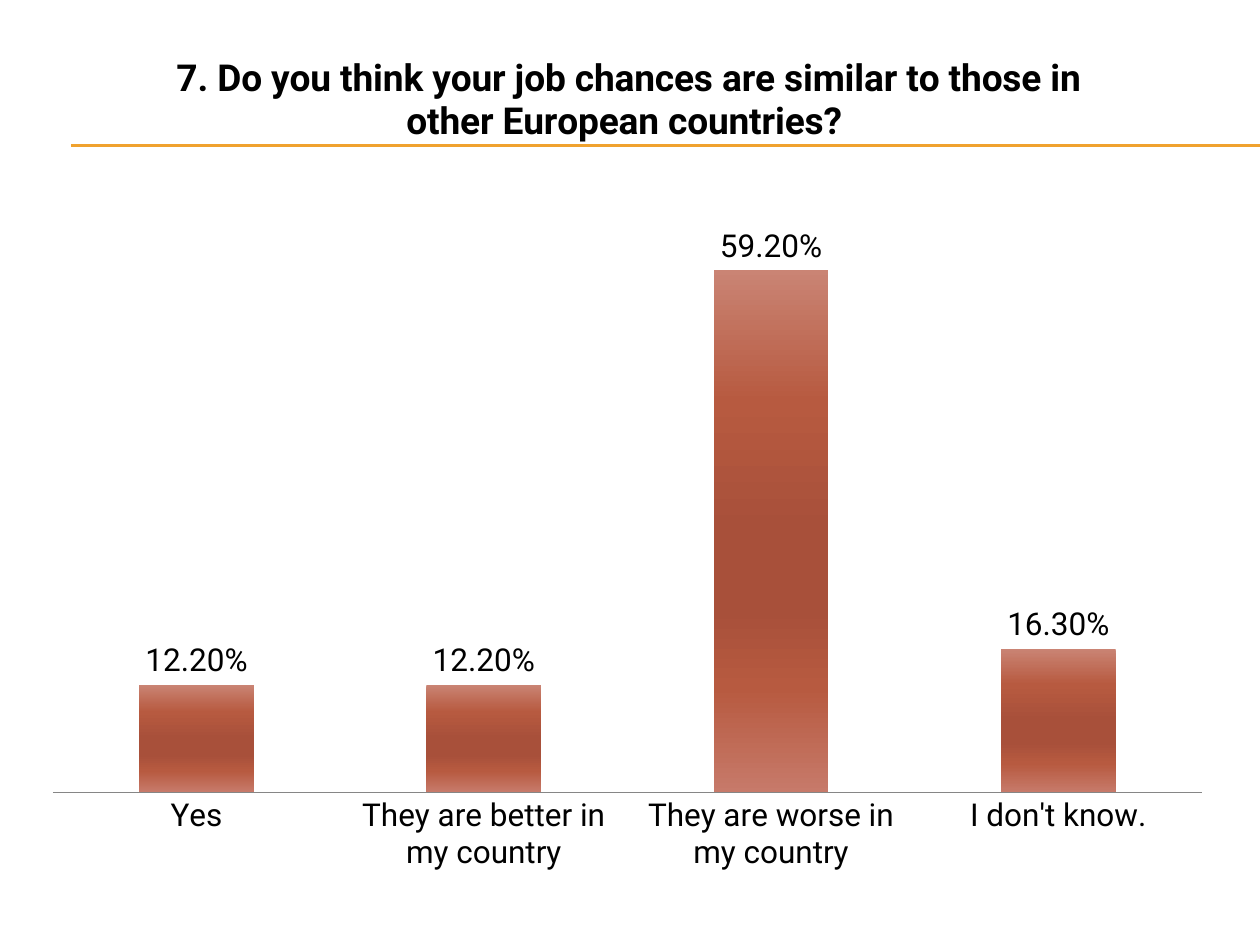
from lxml import etree
from pptx import Presentation
from pptx import util as u
from pptx.chart.data import CategoryChartData
from pptx.dml.color import RGBColor
from pptx.enum import chart as ce, shapes
from pptx.oxml import parse_xml
from pptx.oxml.ns import nsdecls, qn

PX = 914400 // 126
FONT = "Roboto"
STOPS = [(0, "CA8474"), (25, "B75A40"), (50, "A8503A"),
         (65, "A8503A"), (80, "B75A40"), (100, "C77A6A")]
DATA = {"Yes": 0.122, "They are better in my country": 0.122,
        "They are worse in my country": 0.592, "I don't know.": 0.163}
TITLE = " 7. Do you think your job chances are similar to those in other European countries?"


def px(n):
    return u.Emu(n * PX)


def color(code):
    return RGBColor.from_string(code)


def style(font, size=18, bold=False, ink="000000"):
    font.name, font.size, font.bold = FONT, u.Pt(size), bold
    font.color.rgb = color(ink)


def write(frame, words, **look):
    frame.text = words
    style(frame.paragraphs[0].runs[0].font, **look)


def rule(slide, left, top, width):
    line = slide.shapes.add_connector(
        shapes.MSO_CONNECTOR.STRAIGHT, px(left), px(top), px(left + width), px(top))
    line.line.color.rgb = color("F0A22E")
    line.line.width = u.Pt(0.75)
    etree.SubElement(line._element.spPr, qn("a:effectLst"))


def layout(box, inner=False, **parts):
    target = '<c:layoutTarget val="inner"/>' if inner else ""
    modes = "".join(f'<c:{k}Mode val="edge"/>' for k in "xy")
    sizes = "".join(f'<c:{k} val="{v:.2f}"/>' for k, v in parts.items())
    for old in box.findall(qn("c:layout")):
        box.remove(old)
    node = parse_xml(f'<c:layout {nsdecls("c")}><c:manualLayout>{target}{modes}'
                     f'{sizes}</c:manualLayout></c:layout>')
    text = box.find(qn("c:tx"))
    if text is None:
        box.insert(0, node)
    else:
        text.addnext(node)


def shade(fill):
    fill.gradient()
    fill.gradient_angle = 270
    stops = fill._fill._gradFill.gsLst
    for stop in list(stops):
        stops.remove(stop)
    for at, code in STOPS:
        stops.append(parse_xml(f'<a:gs {nsdecls("a")} pos="{at * 1000}">'
                               f'<a:srgbClr val="{code}"/></a:gs>'))


def bars(slide, left, top, width, height):
    data = CategoryChartData(number_format="0.00%")
    data.categories = list(DATA)
    data.add_series("Series 1", list(DATA.values()))
    chart = slide.shapes.add_chart(
        ce.XL_CHART_TYPE.COLUMN_CLUSTERED,
        px(left), px(top), px(width), px(height), data).chart
    style(chart.font)
    chart.has_legend = False
    write(chart.chart_title.text_frame, TITLE, size=21.2, bold=True)
    chart.chart_title.include_in_layout = False
    layout(chart.chart_title._element, x=0.11, y=0.02)
    layout(chart._chartSpace.chart.plotArea, inner=True, x=0.02, y=0.17, w=0.96, h=0.72)

    value = chart.value_axis
    value.minimum_scale, value.maximum_scale = 0, 0.7
    value.has_major_gridlines = False
    value.visible = False
    base = chart.category_axis
    base.major_tick_mark = ce.XL_TICK_MARK.NONE
    base.format.line.color.rgb = color("868686")
    base.format.line.width = u.Pt(0.75)

    plot = chart.plots[0]
    plot.gap_width = 150
    plot.vary_by_categories = False
    plot.has_data_labels = True
    labels = plot.data_labels
    labels.show_value = True
    labels.number_format, labels.number_format_is_linked = "0.00%", False
    labels.position = ce.XL_LABEL_POSITION.OUTSIDE_END
    style(labels.font)
    shade(plot.series[0].format.fill)


def main():
    deck = Presentation()
    deck.slide_width, deck.slide_height = px(1260), px(945)
    slide = deck.slides.add_slide(deck.slide_layouts[6])
    for top in (145, 146):
        rule(slide, 71, top, 1189)
    bars(slide, 29, 29, 1197, 858)
    deck.save("out.pptx")


if __name__ == "__main__":
    main()
